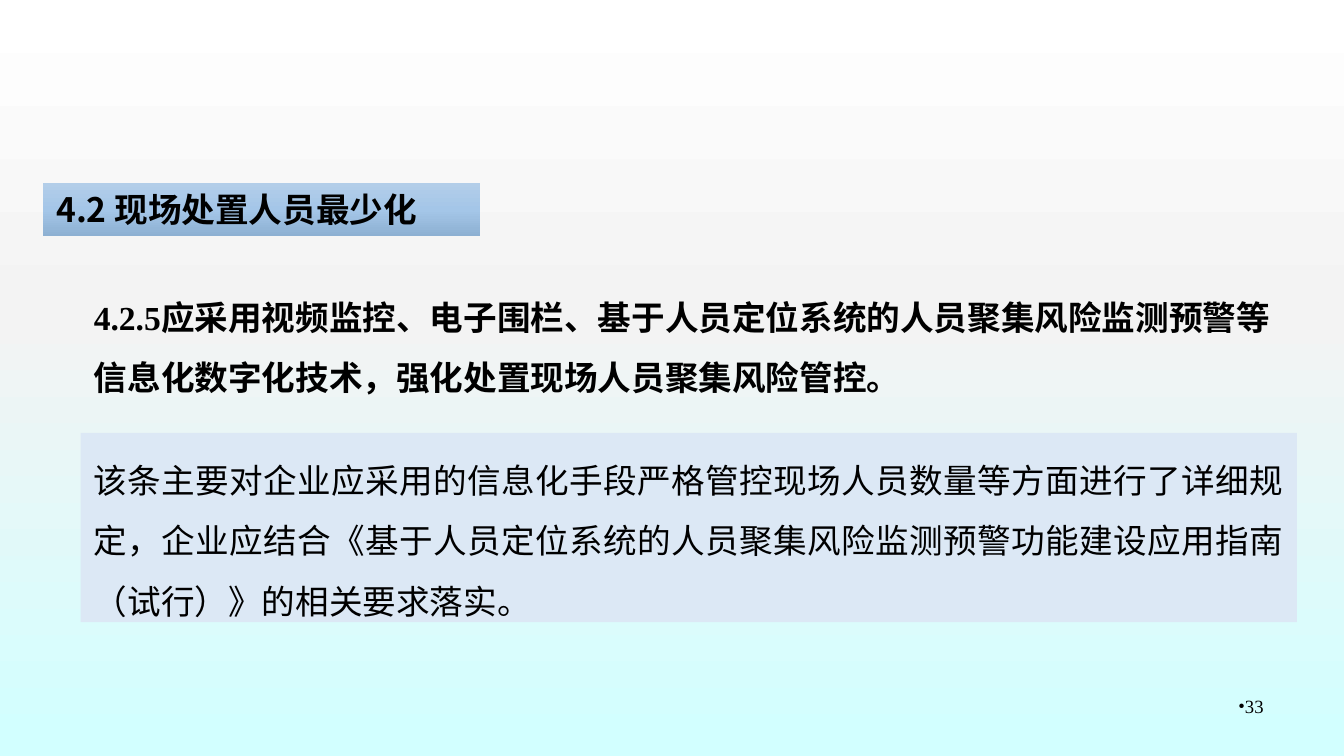
from lxml import etree
from pptx import Presentation
from pptx.dml import color
from pptx.enum import shapes, text
from pptx.oxml import ns
from pptx.util import Inches, Pt

SANS = "Noto Sans CJK SC"
SERIF = "Times New Roman"


def rgb(value):
    return color.RGBColor.from_string(value)


def set_gradient(owner, fill, stops):
    """Fill from top to bottom; stops are (percent, colour) pairs."""
    fill.gradient()
    fill.gradient_angle = 270
    stop_list = next(owner.element.iter(ns.qn("a:gsLst")))
    for old in list(stop_list):
        stop_list.remove(old)
    for percent, value in stops:
        stop = etree.SubElement(stop_list, ns.qn("a:gs"), pos=str(percent * 1000))
        etree.SubElement(stop, ns.qn("a:srgbClr"), val=value)


def add_panel(page, place):
    panel = page.shapes.add_shape(
        shapes.MSO_SHAPE.RECTANGLE, *[Inches(length) for length in place])
    panel.shadow.inherit = False
    panel.line.fill.background()
    return panel


def add_text_box(page, place):
    return page.shapes.add_textbox(*[Inches(length) for length in place])


def add_bullet(para, face, sign):
    """Put a bullet right before the text, with no hanging indent."""
    props = para._p.get_or_add_pPr()
    props.set("marL", "0")
    props.set("indent", "0")
    etree.SubElement(props, ns.qn("a:buFont"), typeface=face)
    etree.SubElement(props, ns.qn("a:buChar"), char=sign)


def write(box, words, face=SANS, size=18, bold=False, bullet=None, **layout):
    """Put one paragraph in a box; layout holds paragraph attributes."""
    frame = box.text_frame
    frame.word_wrap = True
    frame.vertical_anchor = text.MSO_ANCHOR.TOP
    para = frame.paragraphs[0]
    for name, value in {"alignment": text.PP_ALIGN.LEFT, **layout}.items():
        setattr(para, name, value)
    if bullet:
        add_bullet(para, face, bullet)
    span = para.add_run()
    span.text = words
    for name, value in {"name": face, "size": Pt(size), "bold": bold}.items():
        setattr(span.font, name, value)
    span.font.color.rgb = rgb("000000")
    etree.SubElement(span._r.get_or_add_rPr(), ns.qn("a:ea"), typeface=SANS)


def main():
    deck = Presentation()
    deck.slide_width = Inches(10)
    deck.slide_height = deck.slide_width * 9 // 16
    page = deck.slides.add_slide(deck.slide_layouts[6])
    set_gradient(page, page.background.fill,
                 [(0, "FFFFFF"), (42, "F3F3F3"), (98, "D2FFFF"), (100, "D2FFFF")])

    number = add_text_box(page, (7.17, 5.12, 2.33, 0.39))
    write(number, "33", SERIF, 10, bullet="•", alignment=text.PP_ALIGN.RIGHT)

    clause = add_text_box(page, (0.6, 2.01, 9.06, 0.95))
    write(clause, "4.2.5应采用视频监控、电子围栏、基于人员定位系统的人员聚集风险监测预警等"
          "信息化数字化技术，强化处置现场人员聚集风险管控。",
          SERIF, bold=True, line_spacing=1.5)

    comment = add_panel(page, (0.6, 3.22, 9.05, 1.41))
    comment.fill.solid()
    comment.fill.fore_color.rgb = rgb("DCE8F5")
    write(comment, "该条主要对企业应采用的信息化手段严格管控现场人员数量等方面进行了详细规定，"
          "企业应结合《基于人员定位系统的人员聚集风险监测预警功能建设应用指南（试行）》"
          "的相关要求落实。", alignment=text.PP_ALIGN.JUSTIFY, line_spacing=1.5)

    heading = add_panel(page, (0.32, 1.36, 3.25, 0.4))
    set_gradient(heading, heading.fill,
                 [(0, "B3CEE9"), (50, "A4C6E8"), (100, "8DB0D2")])
    write(heading, "4.2 现场处置人员最少化", bold=True)

    deck.save("out.pptx")


if __name__ == "__main__":
    main()
